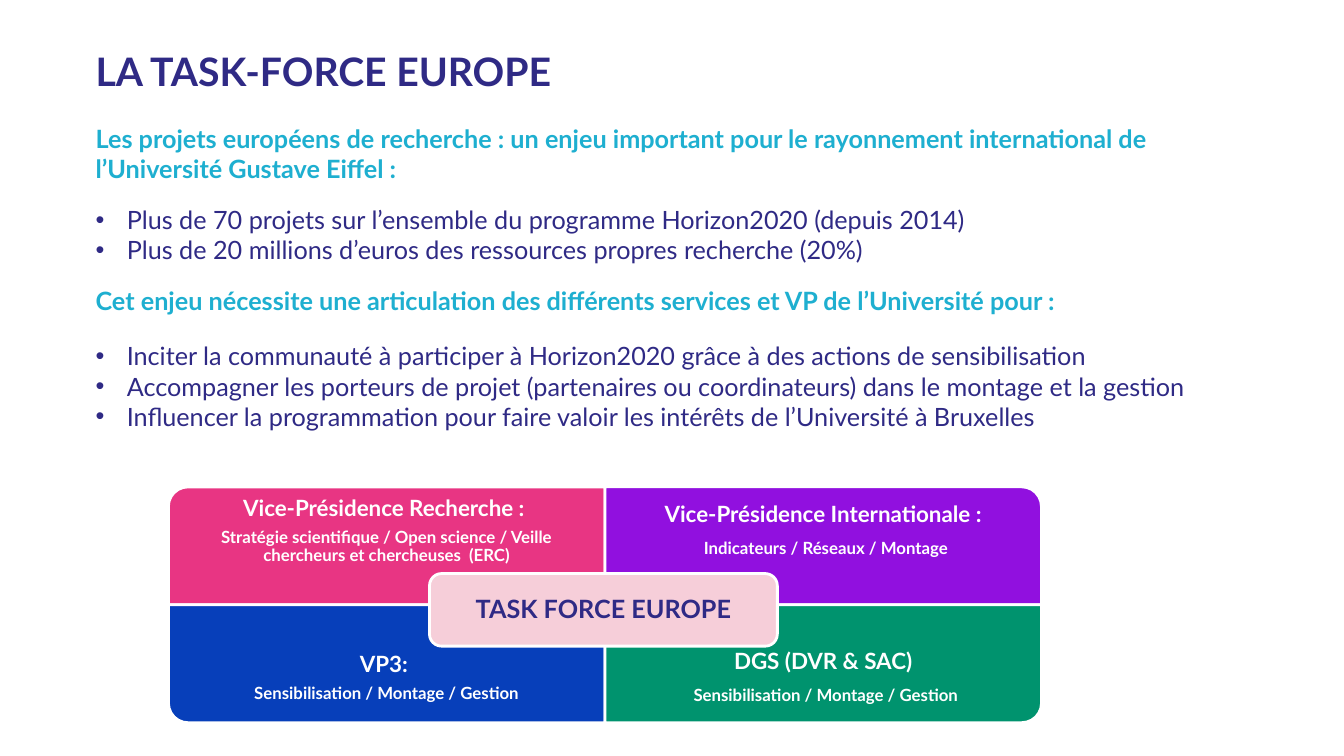
"""Build the slide presenting the European task force."""
from dataclasses import dataclass

from lxml.etree import SubElement
from pptx import Presentation
from pptx.dml.color import RGBColor
from pptx.enum.shapes import MSO_SHAPE
from pptx.enum.text import MSO_ANCHOR, PP_ALIGN
from pptx.oxml.ns import qn
from pptx.shapes.autoshape import Shape
from pptx.slide import Slide
from pptx.text.text import TextFrame, _Paragraph
from pptx.util import Inches, Pt

NAVY = RGBColor(0x2F, 0x2A, 0x85)
CYAN = RGBColor(0x1E, 0xAF, 0xD0)
WHITE = RGBColor(0xFF, 0xFF, 0xFF)
PINK = RGBColor(0xE8, 0x35, 0x83)
PURPLE = RGBColor(0x91, 0x10, 0xDF)
BLUE = RGBColor(0x07, 0x3F, 0xBA)
GREEN = RGBColor(0x00, 0x93, 0x6E)
PALE_PINK = RGBColor(0xF6, 0xCE, 0xD9)

FONT = "Lato"
TEXT_LEFT = 0.85
BULLET_INDENT = 0.31
MATRIX_LEFT, MATRIX_TOP = 1.67, 4.83
QUADRANT_WIDTH, QUADRANT_HEIGHT = 4.33, 1.17
LABEL_HEIGHT = 0.88


@dataclass
class TextBlock:
    top: float
    width: float
    height: float
    lines: list[str]
    color: RGBColor = NAVY
    size: int = 18
    bold: bool = False
    bulleted: bool = False


@dataclass
class Quadrant:
    row: int
    column: int
    rotation: int
    fill: RGBColor
    heading: str
    detail: str
    tall_detail: bool = False


TEXT_BLOCKS = [
    TextBlock(0.42, 9.3, 0.86, ["LA TASK-FORCE EUROPE"], size=28, bold=True),
    TextBlock(1.98, 9.32, 1.17, [
        "Plus de 70 projets sur l’ensemble du programme Horizon2020 (depuis 2014)",
        "Plus de 20 millions d’euros des ressources propres recherche (20%)",
    ], bulleted=True),
    TextBlock(1.17, 11.31, 1.42, [
        "Les projets européens de recherche : un enjeu important pour le "
        "rayonnement international de l’Université Gustave Eiffel :",
    ], CYAN, bold=True),
    TextBlock(3.33, 11.4, 1.17, [
        "Inciter la communauté à participer à Horizon2020 grâce à des actions de sensibilisation",
        "Accompagner les porteurs de projet (partenaires ou coordinateurs) "
        "dans le montage et la gestion",
        "Influencer la programmation pour faire valoir les intérêts de l’Université à Bruxelles",
    ], bulleted=True),
    TextBlock(2.78, 11.06, 1.42, [
        "Cet enjeu nécessite une articulation des différents services "
        "et VP de l’Université pour :",
    ], CYAN, bold=True),
]

QUADRANTS = [
    Quadrant(0, 0, 270, PINK, "Vice-Présidence Recherche : ",
             "Stratégie scientifique / Open science / Veille chercheurs et chercheuses  (ERC)"),
    Quadrant(0, 1, 0, PURPLE, "Vice-Présidence Internationale :",
             "Indicateurs / Réseaux / Montage", True),
    Quadrant(1, 0, 180, BLUE, "VP3: ", "Sensibilisation / Montage / Gestion"),
    Quadrant(1, 1, 90, GREEN, "DGS (DVR & SAC)",
             "Sensibilisation / Montage / Gestion", True),
]


def add_span(para: _Paragraph, text: str, size: int, color: RGBColor, bold: bool) -> None:
    """Append one formatted run to a paragraph."""
    span = para.add_run()
    span.text = text
    span.font.name = FONT
    span.font.size = Pt(size)
    span.font.bold = bold
    span.font.color.rgb = color


def add_bullet(para: _Paragraph) -> None:
    """Give a paragraph a hanging bullet."""
    properties = para._p.get_or_add_pPr()
    properties.set("marL", str(Inches(BULLET_INDENT)))
    properties.set("indent", str(-Inches(BULLET_INDENT)))
    SubElement(properties, qn("a:buFont")).set("typeface", "Arial")
    SubElement(properties, qn("a:buChar")).set("char", "•")


def add_text_block(page: Slide, block: TextBlock) -> None:
    """Draw one left-aligned block of text."""
    box = page.shapes.add_textbox(Inches(TEXT_LEFT), Inches(block.top),
                                  Inches(block.width), Inches(block.height))
    frame = box.text_frame
    frame.word_wrap = True
    for index, line in enumerate(block.lines):
        para = frame.add_paragraph() if index else frame.paragraphs[0]
        if block.bulleted:
            add_bullet(para)
        add_span(para, line, block.size, block.color, block.bold)


def prepare_label(frame: TextFrame, inset: float) -> None:
    """Centre a label vertically and set equal insets."""
    frame.word_wrap = True
    frame.vertical_anchor = MSO_ANCHOR.MIDDLE
    frame.margin_left = frame.margin_right = Inches(inset)
    frame.margin_top = frame.margin_bottom = Inches(inset)


def style_label_paragraph(para: _Paragraph) -> None:
    """Apply the shared label alignment and spacing."""
    para.alignment = PP_ALIGN.CENTER
    para.line_spacing = 0.9
    para.space_after = Pt(5.6)


def add_panel(page: Slide, kind: MSO_SHAPE, left: float, top: float,
              width: float, height: float, fill: RGBColor) -> Shape:
    """Draw a filled shape with a white outline."""
    panel = page.shapes.add_shape(kind, Inches(left), Inches(top),
                                  Inches(width), Inches(height))
    panel.shadow.inherit = False
    panel.fill.solid()
    panel.fill.fore_color.rgb = fill
    panel.line.color.rgb = WHITE
    panel.line.width = Pt(2)
    return panel


def add_quadrant(page: Slide, quadrant: Quadrant) -> None:
    """Draw one quadrant, its rounded corner facing outwards, and its label."""
    left = MATRIX_LEFT + quadrant.column * QUADRANT_WIDTH
    top = MATRIX_TOP + quadrant.row * QUADRANT_HEIGHT
    width, height = QUADRANT_WIDTH, QUADRANT_HEIGHT
    if quadrant.rotation % 180:
        width, height = height, width
    panel = add_panel(page, MSO_SHAPE.ROUND_1_RECTANGLE,
                      left + (QUADRANT_WIDTH - width) / 2,
                      top + (QUADRANT_HEIGHT - height) / 2,
                      width, height, quadrant.fill)
    panel.rotation = quadrant.rotation

    label_top = top + quadrant.row * (QUADRANT_HEIGHT - LABEL_HEIGHT)
    box = page.shapes.add_textbox(Inches(left), Inches(label_top),
                                  Inches(QUADRANT_WIDTH), Inches(LABEL_HEIGHT))
    frame = box.text_frame
    prepare_label(frame, 0.12)
    heading, detail = frame.paragraphs[0], frame.add_paragraph()
    for para in (heading, detail):
        style_label_paragraph(para)
    add_span(heading, quadrant.heading, 16, WHITE, True)
    if quadrant.tall_detail:
        add_span(detail, " ", 16, WHITE, True)
    add_span(detail, quadrant.detail, 12, WHITE, True)


def add_centre(page: Slide) -> None:
    """Draw the task force panel over the middle of the matrix."""
    panel = add_panel(page, MSO_SHAPE.ROUNDED_RECTANGLE, 4.26, 5.69, 3.45, 0.72, PALE_PINK)
    prepare_label(panel.text_frame, 0.07)
    para = panel.text_frame.paragraphs[0]
    style_label_paragraph(para)
    add_span(para, "TASK FORCE EUROPE", 18, NAVY, True)


def main() -> None:
    """Create and save the deck."""
    deck = Presentation()
    deck.slide_width, deck.slide_height = Inches(13.33), Inches(7.5)
    page = deck.slides.add_slide(deck.slide_layouts[6])
    for block in TEXT_BLOCKS:
        add_text_block(page, block)
    for quadrant in QUADRANTS:
        add_quadrant(page, quadrant)
    add_centre(page)
    deck.save("out.pptx")


if __name__ == "__main__":
    main()
